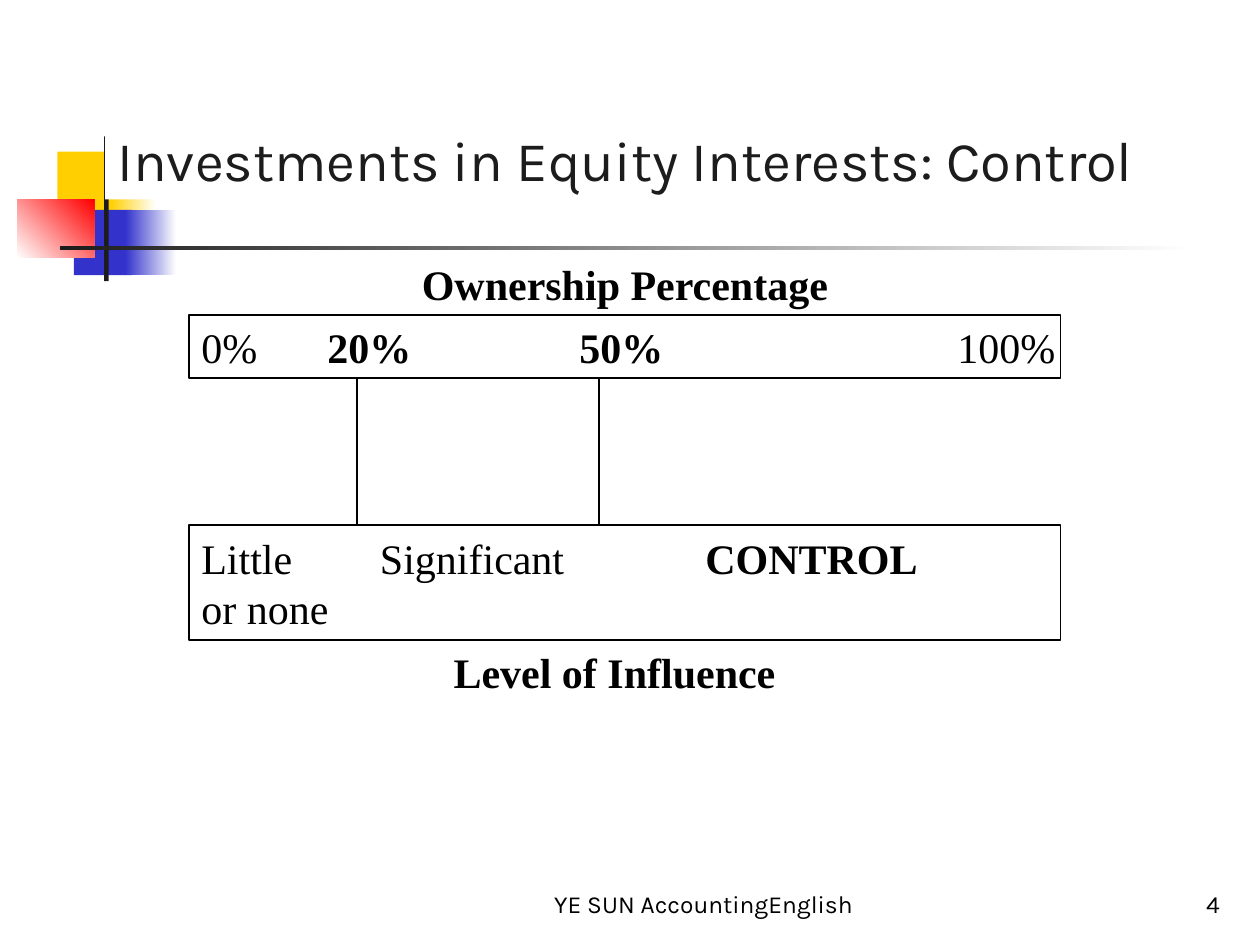
from lxml import etree
from pptx import Presentation
from pptx.dml.color import RGBColor
from pptx.enum.shapes import MSO_CONNECTOR, MSO_SHAPE
from pptx.enum.text import MSO_ANCHOR, PP_ALIGN
from pptx.oxml.ns import qn
from pptx.util import Cm, Pt

SANS, SERIF = "Karla", "Times New Roman"
BLACK, WHITE, INK = "000000", "FFFFFF", "1C1C1C"
YELLOW, BLUE, RED = "FFCF01", "3333CC", "FF0000"


def paint(color_format, color):
    """Set a colour format from a hex string."""
    color_format.rgb = RGBColor.from_string(color)


def add_block(slide, left, top, width, height, color, fade_to=None, angle=0, outline=None):
    """Add a rectangle with a plain or fading fill; lengths in cm."""
    block = slide.shapes.add_shape(
        MSO_SHAPE.RECTANGLE, Cm(left), Cm(top), Cm(width), Cm(height))
    block.shadow.inherit = False
    if fade_to:
        block.fill.gradient()
        block.fill.gradient_angle = angle
        for stop, stop_color in zip(block.fill.gradient_stops, (color, fade_to)):
            paint(stop.color, stop_color)
    else:
        block.fill.solid()
        paint(block.fill.fore_color, color)
    if outline:
        paint(block.line.color, outline)
        block.line.width = Pt(1)
    else:
        block.line.fill.background()
    return block


def write(shape, *lines, font=SERIF, size=24, color=BLACK, align=PP_ALIGN.LEFT,
          anchor=MSO_ANCHOR.MIDDLE, tabs=(), right_inset=0.25):
    """Write lines, each a list of (text, bold) runs, into a shape."""
    frame = shape.text_frame
    frame.word_wrap = True
    frame.vertical_anchor = anchor
    frame.margin_right = Cm(right_inset)
    for index, line in enumerate(lines):
        paragraph = frame.add_paragraph() if index else frame.paragraphs[0]
        paragraph.alignment = align
        if tabs:
            tab_list = etree.SubElement(paragraph._p.get_or_add_pPr(), qn("a:tabLst"))
            for position in tabs:
                etree.SubElement(tab_list, qn("a:tab"), pos=str(Cm(position)), algn="l")
        for text, bold in line:
            run = paragraph.add_run()
            run.text = text
            run.font.name = font
            run.font.size = Pt(size)
            run.font.bold = bold
            paint(run.font.color, color)


def add_emblem(slide, left, top):
    """Add the overlapping colour squares and the two crossing rules."""
    add_block(slide, left + 0.81, top + 0.31, 1.22, 1.32, YELLOW)
    add_block(slide, left + 1.88, top + 0.31, 0.91, 1.32, YELLOW, fade_to=WHITE)
    add_block(slide, left + 1.14, top + 1.48, 1.17, 1.32, BLUE)
    add_block(slide, left + 2.18, top + 1.48, 1.02, 1.32, BLUE, fade_to=WHITE)
    add_block(slide, left, top + 1.27, 1.55, 1.18, WHITE, fade_to=RED, angle=45)
    add_block(slide, left + 1.75, top, 0.09, 2.92, INK)
    add_block(slide, left + 0.86, top + 2.2, 22.86, 0.09, INK, fade_to=WHITE)


def add_title(slide, left, top, width, height):
    """Add the slide title."""
    title = add_block(slide, left, top, width, height, WHITE)
    write(title, [("Investments in Equity Interests: Control", False)],
          font=SANS, size=32, color=INK, anchor=MSO_ANCHOR.BOTTOM)


def add_footer(slide, top, height):
    """Add the footer text and the slide number."""
    for text, left, width, align in (
            ("YE SUN AccountingEnglish", 10.16, 8.05, PP_ALIGN.CENTER),
            ("4", 19.56, 5.28, PP_ALIGN.RIGHT)):
        box = slide.shapes.add_textbox(Cm(left), Cm(top), Cm(width), Cm(height))
        write(box, [(text, False)], font=SANS, size=14, align=align,
              anchor=MSO_ANCHOR.BOTTOM)


def add_influence_scale(slide, left, top, width):
    """Add the ownership bar, the influence bar, their labels and dividers."""
    ownership_top, ownership_height = top + 1.06, 1.27
    ownership_bottom = ownership_top + ownership_height
    influence_top = ownership_bottom + 2.96

    ownership = add_block(slide, left, ownership_top, width, ownership_height,
                          WHITE, outline=BLACK)
    write(ownership, [("0%\t", False), ("20%\t50%\t", True), ("100%", False)],
          tabs=(2.54, 7.62, 15.24), right_inset=0)
    influence = add_block(slide, left, influence_top, width, 2.33, WHITE, outline=BLACK)
    write(influence, [("Little\tSignificant\t", False), ("CONTROL", True)],
          [("or none", False)], tabs=(3.6, 10.16))

    for text, offset, label_top in (
            ("Ownership Percentage", 3.39, top),
            ("Level of Influence", 3.18, influence_top + 2.54)):
        label = add_block(slide, left + offset, label_top, 10.8, 0.85, WHITE, outline=WHITE)
        write(label, [(text, True)], align=PP_ALIGN.CENTER)

    for offset in (3.39, 8.26):
        divider = slide.shapes.add_connector(
            MSO_CONNECTOR.STRAIGHT, Cm(left + offset), Cm(ownership_bottom),
            Cm(left + offset), Cm(influence_top))
        paint(divider.line.color, BLACK)
        divider.line.width = Pt(1)
        etree.SubElement(divider._element.spPr, qn("a:effectLst"))


def main():
    """Build and save the slide."""
    deck = Presentation()
    deck.slide_width, deck.slide_height = Cm(25.4), Cm(19.05)
    slide = deck.slides.add_slide(deck.slide_layouts[6])
    add_emblem(slide, 0.35, 2.75)
    add_footer(slide, 17.36, 1.27)
    add_title(slide, 2.12, 1.48, 21.59, 2.54)
    add_influence_scale(slide, 3.81, 5.29, 17.57)
    deck.save("out.pptx")


if __name__ == "__main__":
    main()
